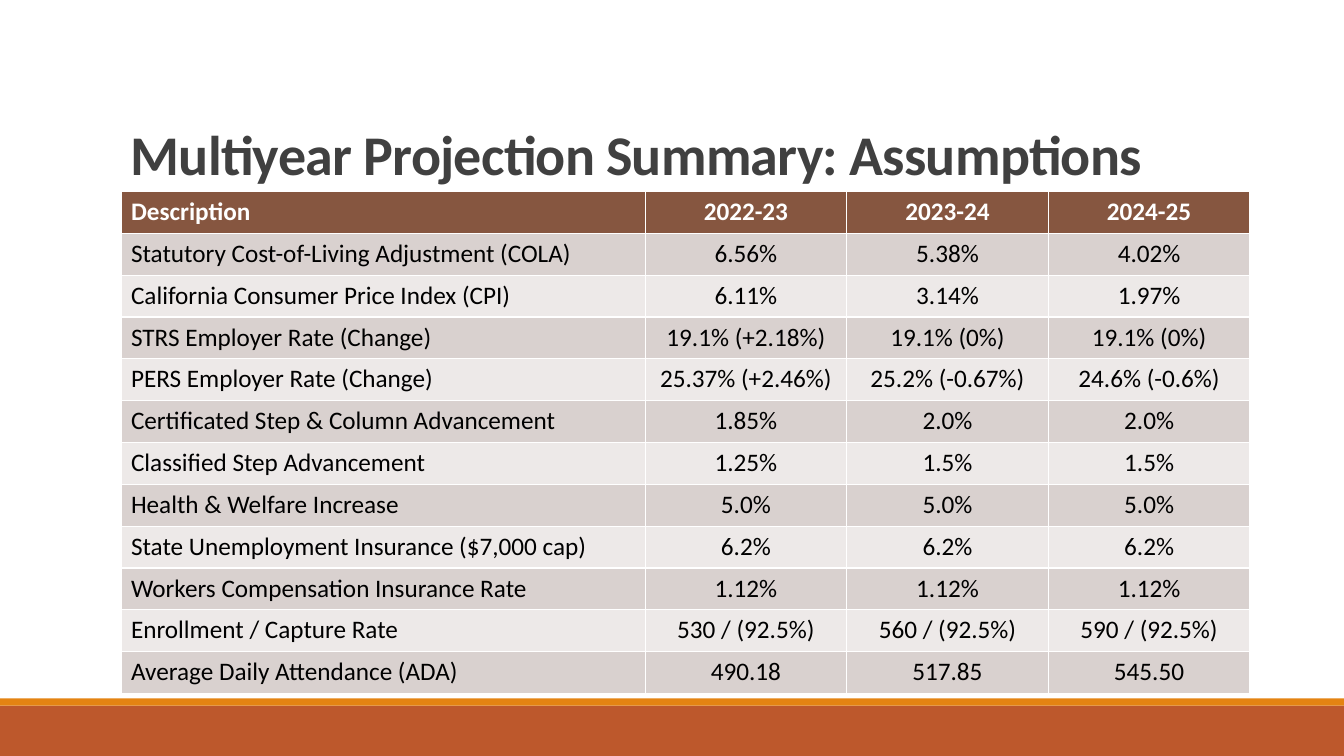
from pptx import Presentation
from pptx.dml.color import RGBColor
from pptx.enum.shapes import MSO_CONNECTOR as CONN, MSO_SHAPE as SHAPE
from pptx.enum.text import MSO_ANCHOR as ANCHOR, PP_ALIGN as ALIGN
from pptx.oxml.ns import qn
from pptx.util import Pt
from lxml import etree

FONT = "Calibri"
RUST = RGBColor(0xBD, 0x58, 0x2C)
ORANGE = RGBColor(0xE4, 0x83, 0x12)
GRAY = RGBColor(0x80, 0x80, 0x80)
DARK = RGBColor(0x40, 0x40, 0x40)
BROWN = RGBColor(0x86, 0x56, 0x40)
BAND_DARK = RGBColor(0xD9, 0xD1, 0xCF)
BAND_LIGHT = RGBColor(0xED, 0xE9, 0xE8)
WHITE = RGBColor(0xFF, 0xFF, 0xFF)
BLACK = RGBColor(0, 0, 0)

COL_WIDTHS = [374.4, 144, 144, 144]
ROW_HEIGHT = 29.88
ROWS = [
    ("Description", "2022-23", "2023-24", "2024-25"),
    ("Statutory Cost-of-Living Adjustment (COLA)", "6.56%", "5.38%", "4.02%"),
    ("California Consumer Price Index (CPI)", "6.11%", "3.14%", "1.97%"),
    ("STRS Employer Rate (Change)", "19.1% (+2.18%)", "19.1% (0%)", "19.1% (0%)"),
    ("PERS Employer Rate (Change)", "25.37% (+2.46%)", "25.2% (-0.67%)", "24.6% (-0.6%)"),
    ("Certificated Step & Column Advancement", "1.85%", "2.0%", "2.0%"),
    ("Classified Step Advancement", "1.25%", "1.5%", "1.5%"),
    ("Health & Welfare Increase", "5.0%", "5.0%", "5.0%"),
    ("State Unemployment Insurance ($7,000 cap)", "6.2%", "6.2%", "6.2%"),
    ("Workers Compensation Insurance Rate", "1.12%", "1.12%", "1.12%"),
    ("Enrollment / Capture Rate", "530 / (92.5%)", "560 / (92.5%)", "590 / (92.5%)"),
    ("Average Daily Attendance (ADA)", "490.18", "517.85", "545.50"),
]


def set_font(p, size, color, bold):
    p.font.name = FONT
    p.font.size = Pt(size)
    p.font.color.rgb = color
    p.font.bold = bold


prs = Presentation()
prs.slide_width, prs.slide_height = Pt(960), Pt(540)
s = prs.slides.add_slide(prs.slide_layouts[6])

for top, height, color in [(504, 36, RUST), (498.8, 5.2, ORANGE)]:
    sp = s.shapes.add_shape(SHAPE.RECTANGLE, 0, Pt(top), Pt(960), Pt(height))
    sp.shadow.inherit = False
    sp.fill.solid()
    sp.fill.fore_color.rgb = color
    sp.line.fill.background()

rule = s.shapes.add_connector(CONN.STRAIGHT, Pt(94.3), Pt(136.8), Pt(879.1), Pt(136.8))
rule.line.color.rgb = GRAY
rule.line.width = Pt(0.5)
etree.SubElement(rule._element.spPr, qn("a:effectLst"))

title = s.shapes.add_textbox(Pt(86.4), Pt(22.3), Pt(792), Pt(114.5))
tf = title.text_frame
tf.word_wrap = True
tf.vertical_anchor = ANCHOR.BOTTOM
p = tf.paragraphs[0]
p.text = "Multiyear Projection Summary: Assumptions"
p.line_spacing = 0.85
set_font(p, 40, DARK, True)
p.font._element.set("spc", "-50")

table = s.shapes.add_table(len(ROWS), len(COL_WIDTHS), Pt(86.4), Pt(136.8),
                           Pt(sum(COL_WIDTHS)), Pt(ROW_HEIGHT * len(ROWS))).table
for column, width in zip(table.columns, COL_WIDTHS):
    column.width = Pt(width)
for i, values in enumerate(ROWS):
    table.rows[i].height = Pt(ROW_HEIGHT)
    header = i == 0
    fill = BROWN if header else BAND_DARK if i % 2 else BAND_LIGHT
    for j, value in enumerate(values):
        cell = table.cell(i, j)
        cell.fill.solid()
        cell.fill.fore_color.rgb = fill
        p = cell.text_frame.paragraphs[0]
        p.text = value
        p.alignment = ALIGN.CENTER if j else ALIGN.LEFT
        set_font(p, 18, WHITE if header else BLACK, header)

prs.save("out.pptx")
